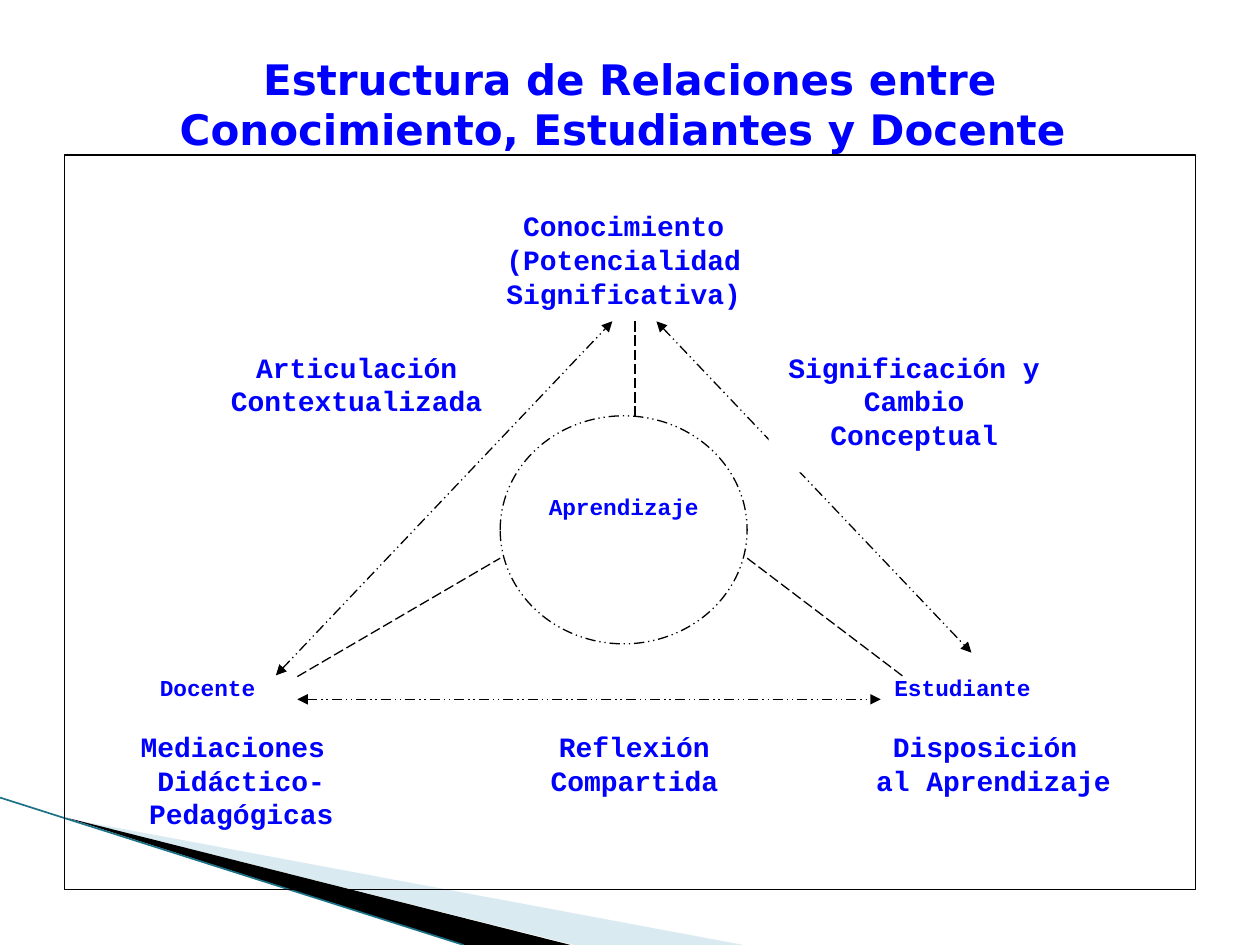
"""Build the slide on knowledge, students and teacher."""
from lxml import etree
from pptx import Presentation
from pptx.dml.color import RGBColor
from pptx.enum.dml import MSO_LINE
from pptx.enum.shapes import MSO_CONNECTOR, MSO_SHAPE
from pptx.enum.text import MSO_ANCHOR, PP_ALIGN
from pptx.oxml.ns import qn
from pptx.util import Inches, Pt

RECT, OVAL = MSO_SHAPE.RECTANGLE, MSO_SHAPE.OVAL
STRAIGHT = MSO_CONNECTOR.STRAIGHT
LEFT, CENTER = PP_ALIGN.LEFT, PP_ALIGN.CENTER
TOP, MIDDLE = MSO_ANCHOR.TOP, MSO_ANCHOR.MIDDLE
DASH, DOTS = MSO_LINE.LONG_DASH, MSO_LINE.DASH_DOT_DOT
COLORS = {"text": "0000FF", "line": "000000", "back": "FFFFFF",
          "pale": "A0CBDC", "dark": "000000", "teal": "1B7186"}
MONO, SANS = "Courier New", "DejaVu Sans"

WEDGES = [
    ("pale", 40, [(0.55, 6.5), (5.9, 7.5), (4.56, 7.5)]),
    ("dark", 100, [(0.53, 6.49), (4.53, 7.5), (3.68, 7.5)]),
]
NODES = [
    ((3.26, 1.61, 3.38, 0.94), ["Conocimiento", "(Potencialidad Significativa)"], 16, CENTER),
    ((7, 5.3, 1.75, 0.61), ["Estudiante"], 13, LEFT),
    ((1.17, 5.3, 1.75, 0.61), ["Docente"], 13, LEFT),
]
CORE = ((4.15, 3.86, 1.6, 0.56), ["Aprendizaje"], 13, CENTER)
LABELS = [
    ((1.69, 2.73, 2.28, 0.75), ["Articulación Contextualizada"], 16, CENTER),
    ((3.97, 5.74, 2.13, 0.92), ["Reflexión Compartida"], 16, CENTER),
    ((6.1, 2.73, 2.31, 1.02), ["Significación y Cambio Conceptual"], 16, CENTER),
    ((0.58, 5.74, 2.67, 0.75), ["Mediaciones ", "Didáctico-Pedagógicas"], 16, CENTER),
    ((6.46, 5.74, 2.85, 0.75), ["Disposición ", "al Aprendizaje"], 16, CENTER),
]
SIDES = [(2.19, 5.36, 4.86, 2.55), (5.21, 2.55, 7.71, 5.18), (2.36, 5.55, 6.99, 5.55)]
SPOKES = [(2.36, 5.37, 3.97, 4.43), (5.93, 4.43, 7.17, 5.37), (5.04, 2.55, 5.04, 3.3)]


def color(name):
    """Return a named colour."""
    return RGBColor.from_string(COLORS[name])


def add_wedge(slide, fill, alpha, points):
    """Add a filled corner wedge with the given opacity."""
    spots = [(Inches(x), Inches(y)) for x, y in points]
    pen = slide.shapes.build_freeform(*spots[0])
    pen.add_line_segments(spots[1:], close=True)
    shape = pen.convert_to_shape()
    shape.shadow.inherit = False
    shape.line.fill.background()
    shape.fill.solid()
    shape.fill.fore_color.rgb = color(fill)
    if alpha < 100:
        tone = shape._element.spPr.find(qn("a:solidFill")).find(qn("a:srgbClr"))
        etree.SubElement(tone, qn("a:alpha"), val=str(alpha * 1000))


def add_box(slide, kind, place, fill=None, line=None, dash=None):
    """Add a plain shape with an optional fill and outline."""
    shape = slide.shapes.add_shape(kind, *map(Inches, place))
    shape.shadow.inherit = False
    if fill:
        shape.fill.solid()
        shape.fill.fore_color.rgb = color(fill)
    else:
        shape.fill.background()
    if line:
        shape.line.color.rgb = color(line)
        shape.line.width = Pt(0.75)
        if dash:
            shape.line.dash_style = dash
    else:
        shape.line.fill.background()
    return shape


def add_text(shape, lines, size, align, font=MONO, anchor=TOP):
    """Write bold lines of text into a shape."""
    frame = shape.text_frame
    frame.word_wrap = True
    frame.vertical_anchor = anchor
    for i, text in enumerate(lines):
        para = frame.add_paragraph() if i else frame.paragraphs[0]
        para.alignment = align
        run = para.add_run()
        run.text = text
        run.font.name = font
        run.font.size = Pt(size)
        run.font.bold = True
        run.font.color.rgb = color("text")


def add_label(slide, place, lines, size, align):
    """Add a white box with text."""
    add_text(add_box(slide, RECT, place, "back"), lines, size, align)


def add_line(slide, ends, tone="line", width=0.75, dash=None, arrows=False):
    """Add a straight line, with arrowheads at both ends if asked."""
    link = slide.shapes.add_connector(STRAIGHT, *map(Inches, ends))
    link.line.color.rgb = color(tone)
    link.line.width = Pt(width)
    if dash:
        link.line.dash_style = dash
    props = link._element.spPr
    if arrows:
        for tag in ("a:headEnd", "a:tailEnd"):
            etree.SubElement(props.find(qn("a:ln")), qn(tag), type="triangle")
    etree.SubElement(props, qn("a:effectLst"))


def main():
    """Build and save the slide."""
    deck = Presentation()
    deck.slide_width, deck.slide_height = Inches(10), Inches(7.5)
    slide = deck.slides.add_slide(deck.slide_layouts[6])
    for wedge in WEDGES:
        add_wedge(slide, *wedge)
    add_line(slide, (0, 6.33, 3.68, 7.5), "teal", 0.95)
    title = slide.shapes.add_textbox(*map(Inches, (0.75, 0.44, 8.5, 0.77)))
    add_text(title, ["Estructura de Relaciones entre Conocimiento, Estudiantes y Docente "],
             24, CENTER, SANS, MIDDLE)
    add_box(slide, RECT, (0.51, 1.23, 8.98, 5.83), line="line")
    for node in NODES:
        add_label(slide, *node)
    add_box(slide, OVAL, (3.97, 3.3, 1.96, 1.81), "back", "line", DOTS)
    add_label(slide, *CORE)
    for side in SIDES:
        add_line(slide, side, dash=DOTS, arrows=True)
    for label in LABELS:
        add_label(slide, *label)
    for spoke in SPOKES:
        add_line(slide, spoke, dash=DASH)
    deck.save("out.pptx")


if __name__ == "__main__":
    main()
